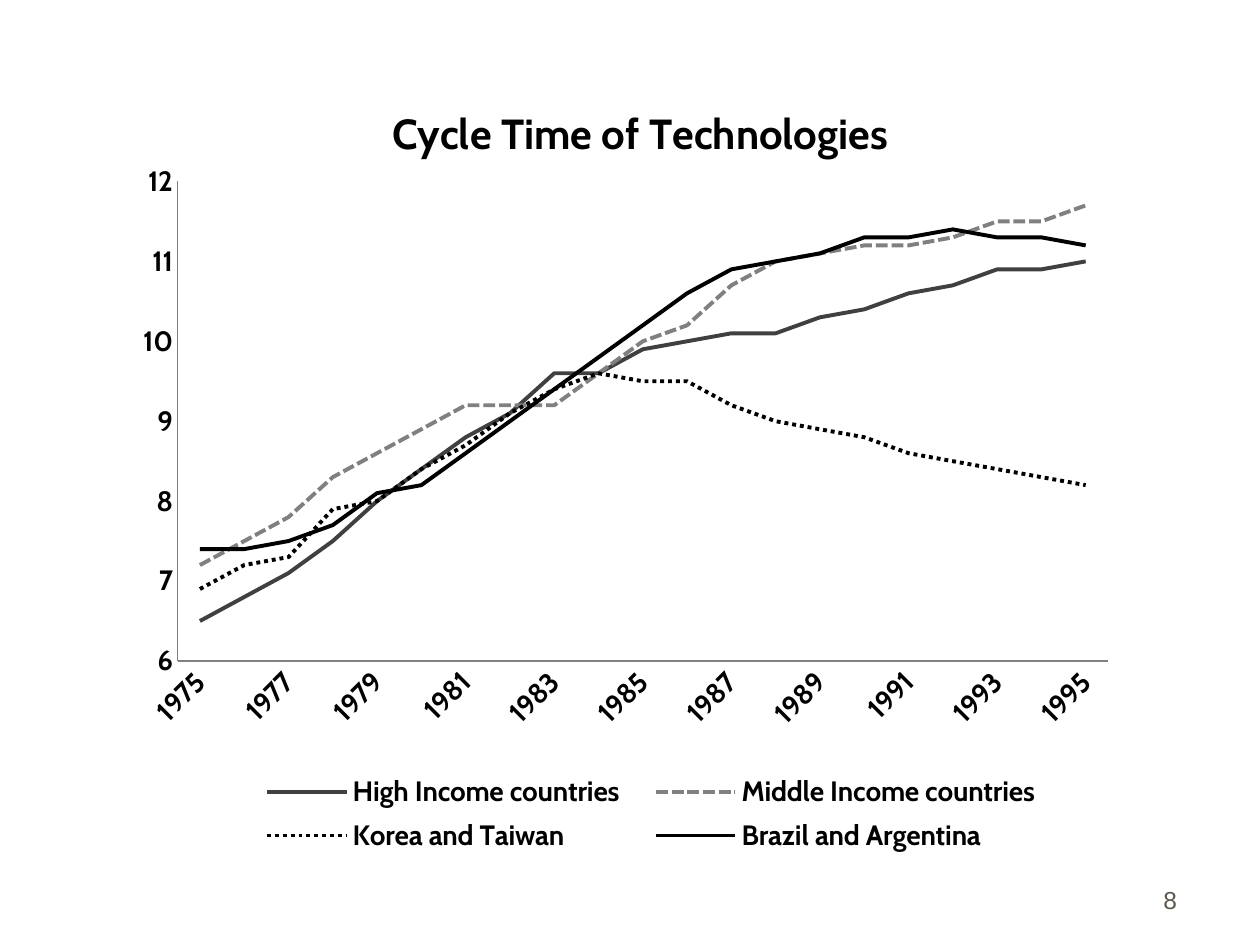
from lxml import etree
from pptx import Presentation
from pptx.chart.data import CategoryChartData
from pptx.dml.color import RGBColor
from pptx.enum.chart import XL_CHART_TYPE, XL_LEGEND_POSITION, XL_MARKER_STYLE, XL_TICK_MARK
from pptx.enum.dml import MSO_LINE
from pptx.enum.text import MSO_ANCHOR, PP_ALIGN
from pptx.oxml.ns import qn
from pptx.util import Inches, Pt

BLACK = RGBColor(0x00, 0x00, 0x00)
DARK_GRAY = RGBColor(0x40, 0x40, 0x40)
GRAY = RGBColor(0x80, 0x80, 0x80)
PAGE_GRAY = RGBColor(0x5E, 0x57, 0x4E)
SOLID, DASHED, DOTTED = MSO_LINE.SOLID, MSO_LINE.SQUARE_DOT, MSO_LINE.ROUND_DOT
NO_TICKS = XL_TICK_MARK.NONE

COUNTRY_GROUPS = [
    ("High Income countries", DARK_GRAY, SOLID,
     [6.5, 6.8, 7.1, 7.5, 8, 8.4, 8.8, 9.1, 9.6, 9.6, 9.9,
      10, 10.1, 10.1, 10.3, 10.4, 10.6, 10.7, 10.9, 10.9, 11]),
    ("Middle Income countries", GRAY, DASHED,
     [7.2, 7.5, 7.8, 8.3, 8.6, 8.9, 9.2, 9.2, 9.2, 9.6, 10,
      10.2, 10.7, 11, 11.1, 11.2, 11.2, 11.3, 11.5, 11.5, 11.7]),
    ("Korea and Taiwan", BLACK, DOTTED,
     [6.9, 7.2, 7.3, 7.9, 8, 8.4, 8.7, 9.1, 9.4, 9.6, 9.5,
      9.5, 9.2, 9, 8.9, 8.8, 8.6, 8.5, 8.4, 8.3, 8.2]),
    ("Brazil and Argentina", BLACK, SOLID,
     [7.4, 7.4, 7.5, 7.7, 8.1, 8.2, 8.6, 9, 9.4, 9.8, 10.2,
      10.6, 10.9, 11, 11.1, 11.3, 11.3, 11.4, 11.3, 11.3, 11.2]),
]


def set_layout(parent, index, **settings):
    """Place a chart part by hand, in fractions of the chart area."""
    for old in parent.findall(qn("c:layout")):
        parent.remove(old)
    layout = etree.Element(qn("c:layout"))
    manual = etree.SubElement(layout, qn("c:manualLayout"))
    for tag, value in settings.items():
        etree.SubElement(manual, qn(f"c:{tag}")).set("val", str(value))
    parent.insert(index, layout)


prs = Presentation()
prs.slide_width, prs.slide_height = Inches(10), Inches(7.5)
slide = prs.slides.add_slide(prs.slide_layouts[6])

page_box = slide.shapes.add_textbox(Inches(7.36), Inches(6.81), Inches(2.08), Inches(0.5))
page_frame = page_box.text_frame
page_frame.word_wrap = True
page_frame.vertical_anchor = MSO_ANCHOR.BOTTOM
page_frame.text = "8"
page_number = page_frame.paragraphs[0]
page_number.alignment = PP_ALIGN.RIGHT
page_number.font.size = Pt(14)
page_number.font.name = "Arial"
page_number.font.color.rgb = PAGE_GRAY

cycle_times = CategoryChartData()
cycle_times.categories = [str(year) for year in range(1975, 1996)]
for name, _, _, values in COUNTRY_GROUPS:
    cycle_times.add_series(name, values)
chart = slide.shapes.add_chart(
    XL_CHART_TYPE.LINE, Inches(0.67), Inches(0.44), Inches(8.82), Inches(6.54), cycle_times
).chart
chart.font.name = "Cabin"
chart.font.size = Pt(10)
chart.font.color.rgb = BLACK

chart.has_title = True
chart.chart_title.text_frame.text = "Cycle Time of Technologies"
title_font = chart.chart_title.text_frame.paragraphs[0].runs[0].font
title_font.name = "Cabin"
title_font.size = Pt(24)
title_font.bold = True
title_font.color.rgb = BLACK

plot = chart.plots[0]
plot.vary_by_categories = False
for series, (_, color, dash, _) in zip(plot.series, COUNTRY_GROUPS):
    series.smooth = False
    series.marker.style = XL_MARKER_STYLE.NONE
    series.format.line.width = Pt(2.25)
    series.format.line.color.rgb = color
    series.format.line.dash_style = dash

years, cycle_axis = chart.category_axis, chart.value_axis
cycle_axis.minimum_scale, cycle_axis.maximum_scale, cycle_axis.major_unit = 6, 12, 1
cycle_axis.tick_labels.number_format = "0"
cycle_axis.tick_labels.number_format_is_linked = False
for axis in (years, cycle_axis):
    axis.has_major_gridlines = False
    axis.major_tick_mark = axis.minor_tick_mark = NO_TICKS
    axis.format.line.color.rgb = GRAY
    axis.format.line.width = Pt(0.75)

chart.has_legend = True
chart.legend.position = XL_LEGEND_POSITION.BOTTOM
chart.legend.include_in_layout = False
for font in (years.tick_labels.font, cycle_axis.tick_labels.font, chart.legend.font):
    font.name = "Cabin"
    font.size = Pt(16)
    font.bold = True
    font.color.rgb = BLACK

# Every second year is labelled, slanted by 45 degrees
year_axis = years._element
year_axis.find(qn("c:txPr")).find(qn("a:bodyPr")).set("rot", str(-45 * 60000))
label_skip = etree.Element(qn("c:tickLblSkip"))
label_skip.set("val", "2")
year_axis.find(qn("c:noMultiLvlLbl")).addprevious(label_skip)

chart_root = chart._chartSpace.chart
set_layout(chart_root.plotArea, 0, layoutTarget="inner", xMode="edge", yMode="edge",
           x=0.084, y=0.153, w=0.837, h=0.582)
set_layout(chart_root.find(qn("c:title")), 1, xMode="edge", yMode="edge", x=0.27, y=0.05)
set_layout(chart_root.find(qn("c:legend")), 1, xMode="edge", yMode="edge",
           x=0.14, y=0.86, w=0.74, h=0.12)

prs.save("out.pptx")
